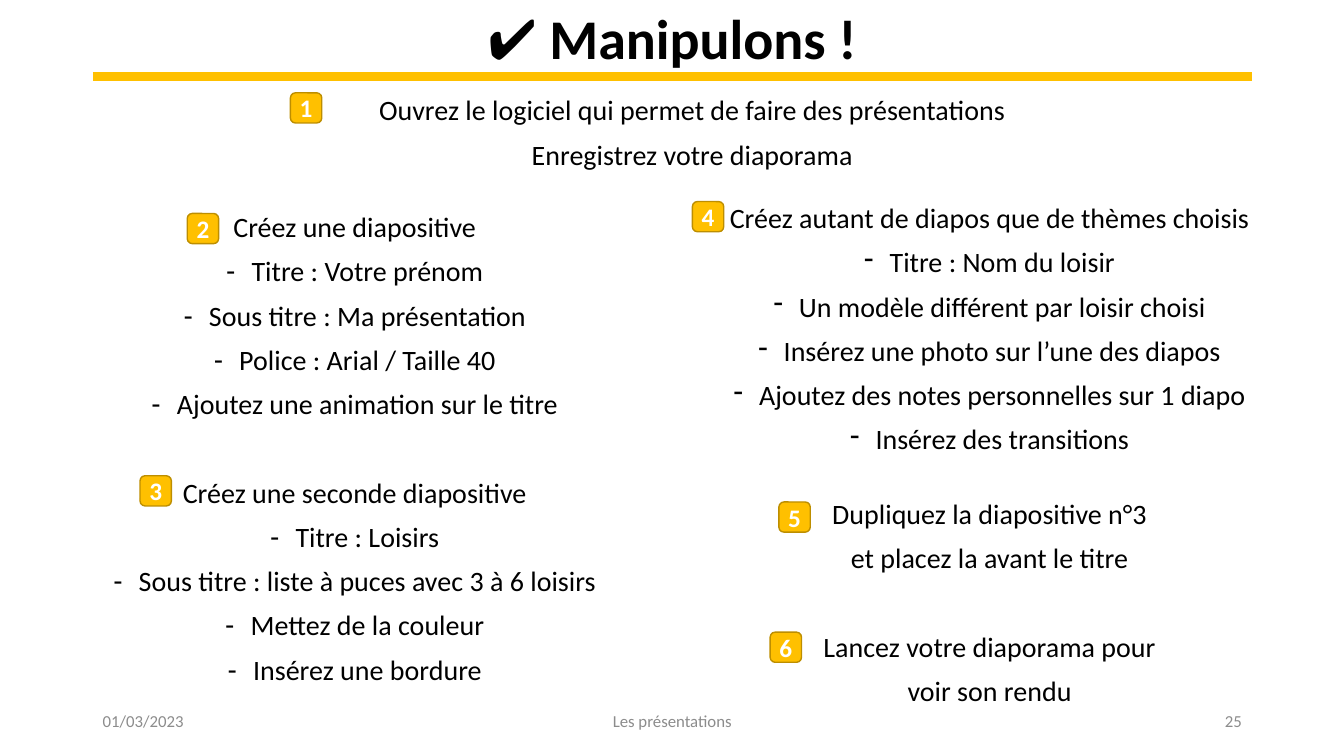
from lxml.etree import SubElement
from pptx import Presentation
from pptx.dml.color import RGBColor
from pptx.enum.shapes import MSO_CONNECTOR as Connector, MSO_SHAPE as Shape
from pptx.enum.text import MSO_ANCHOR as Anchor, MSO_AUTO_SIZE as AutoSize, PP_ALIGN as Align
from pptx.oxml.ns import qn
from pptx.util import Cm, Pt

COLORS = {"text": "000000", "accent": "FFC000", "edge": "BD8E00",
          "footer": "8C8C8C", "badge": "FFFFFF"}
HANGING = Cm(0.64)
STEP_GAP = 41.6

INTRO = [(10, ["Ouvrez le logiciel qui permet de faire des présentations",
               "Enregistrez votre diaporama"], [])]
FIRST_STEPS = [
    (10, ["Créez une diapositive"],
     ["Titre : Votre prénom", "Sous titre : Ma présentation",
      "Police : Arial / Taille 40", "Ajoutez une animation sur le titre"]),
    (STEP_GAP, ["Créez une seconde diapositive"],
     ["Titre : Loisirs", "Sous titre : liste à puces avec 3 à 6 loisirs",
      "Mettez de la couleur", "Insérez une bordure"]),
]
LAST_STEPS = [
    (10, ["Créez autant de diapos que de thèmes choisis"],
     ["Titre : Nom du loisir", "Un modèle différent par loisir choisi",
      "Insérez une photo sur l’une des diapos",
      "Ajoutez des notes personnelles sur 1 diapo", "Insérez des transitions"]),
    (31.6, ["Dupliquez la diapositive n°3", "et placez la avant le titre"], []),
    (STEP_GAP, ["Lancez votre diaporama pour", "voir son rendu"], []),
]
BADGES = [(7.32, 2.34), (4.72, 5.38), (3.53, 11.99),
          (17.45, 5.08), (19.63, 12.65), (19.41, 15.93)]
FOOTERS = [("01/03/2023", 2.34, 7.62, Align.LEFT),
           ("Les présentations", 11.23, 11.43, Align.CENTER),
           ("25", 23.93, 7.62, Align.RIGHT)]


class SlideBuilder:
    """Draws styled elements on the current slide."""

    def __init__(self, slide, font_name="Calibri"):
        self.slide = slide
        self.font_name = font_name

    def style(self, paragraph, size, color, align=Align.CENTER, bold=False):
        paragraph.alignment = align
        font = paragraph.font
        font.name, font.size, font.bold = self.font_name, Pt(size), bold
        font.color.rgb = RGBColor.from_string(COLORS[color])

    def place(self, holder, left, top, width, height):
        holder.left, holder.top = Cm(left), Cm(top)
        holder.width, holder.height = Cm(width), Cm(height)
        return holder

    def text_box(self, left, top, width, height):
        box = self.slide.shapes.add_textbox(Cm(left), Cm(top), Cm(width), Cm(height))
        box.text_frame.word_wrap = True
        return box

    def title(self, wording):
        heading = self.place(self.slide.shapes.title, 2.34, -0.81, 29.21, 3.68)
        frame = heading.text_frame
        frame.text = wording
        frame.auto_size = AutoSize.NONE
        frame.vertical_anchor = Anchor.MIDDLE
        frame.paragraphs[0].line_spacing = 0.9
        self.style(frame.paragraphs[0], 40, "text", bold=True)

    def rule(self, left, right, top):
        rule = self.slide.shapes.add_connector(
            Connector.STRAIGHT, Cm(left), Cm(top), Cm(right), Cm(top))
        rule.line.color.rgb = RGBColor.from_string(COLORS["accent"])
        rule.line.width = Pt(6)
        SubElement(rule._element.spPr, qn("a:effectLst"))

    def steps(self, holder, blocks, top_inset=0.13):
        frame = holder.text_frame
        frame.auto_size = AutoSize.NONE
        frame.vertical_anchor = Anchor.TOP
        frame.margin_top = Cm(top_inset)
        rows = []
        for gap, sentences, items in blocks:
            gaps = [gap] + [10] * (len(sentences) - 1)
            rows += [(wording, before, False) for wording, before in zip(sentences, gaps)]
            rows += [(wording, 10, True) for wording in items]
        frame.text = "\n".join(wording for wording, _, _ in rows)
        for paragraph, (_, before, bulleted) in zip(frame.paragraphs, rows):
            paragraph.line_spacing = 0.9
            paragraph.space_before = Pt(before)
            self.bullet(paragraph, bulleted)
            self.style(paragraph, 20, "text")

    def bullet(self, paragraph, bulleted):
        properties = paragraph._p.get_or_add_pPr()
        indent = HANGING if bulleted else 0
        properties.set("marL", str(int(indent)))
        properties.set("indent", str(-int(indent)))
        if bulleted:
            SubElement(properties, qn("a:buChar"), char="-")
        else:
            SubElement(properties, qn("a:buNone"))

    def badge(self, number, left, top):
        badge = self.slide.shapes.add_shape(
            Shape.ROUNDED_RECTANGLE, Cm(left), Cm(top), Cm(0.79), Cm(0.76))
        badge.shadow.inherit = False
        badge.fill.solid()
        badge.fill.fore_color.rgb = RGBColor.from_string(COLORS["accent"])
        badge.line.color.rgb = RGBColor.from_string(COLORS["edge"])
        badge.line.width = Pt(1)
        frame = badge.text_frame
        frame.margin_left = frame.margin_right = frame.margin_top = frame.margin_bottom = 0
        frame.vertical_anchor = Anchor.MIDDLE
        frame.text = str(number)
        self.style(frame.paragraphs[0], 18, "badge", bold=True)

    def footer(self, wording, left, width, align):
        frame = self.text_box(left, 17.65, width, 1.02).text_frame
        frame.vertical_anchor = Anchor.MIDDLE
        frame.text = wording
        self.style(frame.paragraphs[0], 12, "footer", align)


def main():
    presentation = Presentation()
    presentation.slide_width, presentation.slide_height = Cm(33.87), Cm(19.05)
    slide = presentation.slides.add_slide(presentation.slide_layouts[1])
    builder = SlideBuilder(slide)

    builder.rule(2.34, 31.55, 1.93)
    builder.title("✔ Manipulons !")
    first_column = builder.place(slide.placeholders[1], 0.94, 4.14, 16, 14.5)
    builder.steps(first_column, FIRST_STEPS, top_inset=1.24)
    for footer in FOOTERS:
        builder.footer(*footer)
    builder.steps(builder.text_box(6.93, 2.31, 21.03, 2.18), INTRO)
    last_column = builder.text_box(16.94, 3.91, 16, 14.5)
    builder.steps(last_column, LAST_STEPS, top_inset=1.24)
    for number, corner in enumerate(BADGES, start=1):
        builder.badge(number, *corner)

    presentation.save("out.pptx")


if __name__ == "__main__":
    main()
